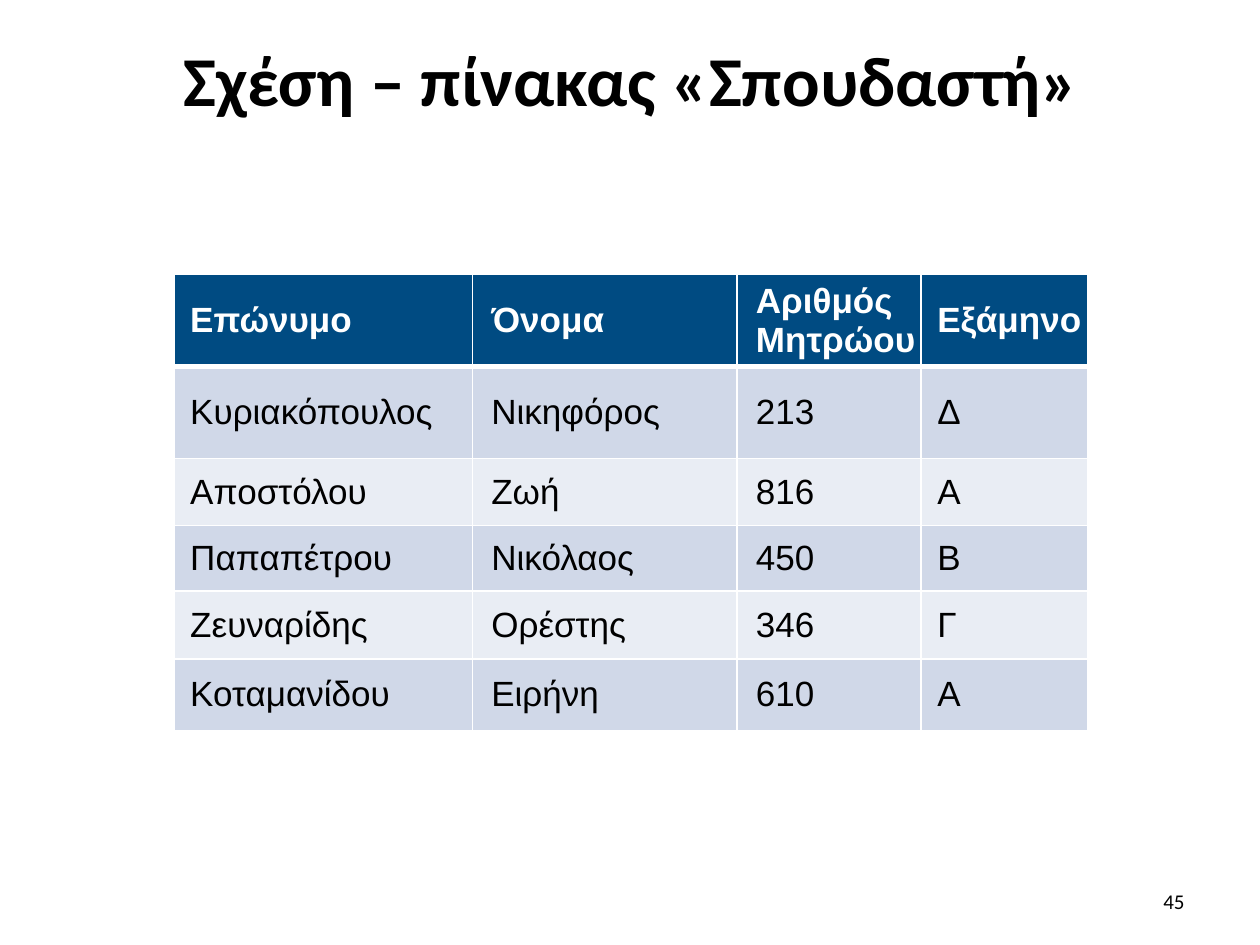
"""Build a slide with a table of students."""
import pptx
import pptx.util
import pptx.oxml
import pptx.oxml.ns
from pptx.dml.color import RGBColor
from pptx.enum.text import MSO_ANCHOR, PP_ALIGN
from pptx.util import Inches

BLACK = RGBColor(0, 0, 0)
WHITE = RGBColor(255, 255, 255)
NAVY = RGBColor(0x00, 0x4B, 0x82)
BANDS = [RGBColor(0xE9, 0xED, 0xF4), RGBColor(0xD0, 0xD8, 0xE8)]

TITLE = "Σχέση – πίνακας «Σπουδαστή»"
PAGE = "45"
ROWS = [
    ("Επώνυμο", "Όνομα", "Αριθμός Μητρώου", "Εξάμηνο"),
    ("Κυριακόπουλος", "Νικηφόρος", "213", "Δ"),
    ("Αποστόλου", "Ζωή", "816", "A"),
    ("Παπαπέτρου", "Νικόλαος", "450", "Β"),
    ("Ζευναρίδης", "Ορέστης", "346", "Γ"),
    ("Κοταμανίδου", "Ειρήνη", "610", "A"),
]
WIDTHS = [2.37, 2.1, 1.46, 1.32]
HEIGHTS = [0.73, 0.73, 0.53, 0.52, 0.54, 0.57]
INDENTS = [0.12, 0.14, 0.14, 0.12]


def style(para, face, size, color, bold=False):
    font = para.font
    font.name, font.size, font.bold = face, pptx.util.Pt(size), bold
    font.color.rgb = color


def add_text(slide, text, box, size, align, bold=False):
    frame = slide.shapes.add_textbox(*map(Inches, box)).text_frame
    frame.word_wrap = True
    frame.vertical_anchor = MSO_ANCHOR.MIDDLE
    para = frame.paragraphs[0]
    para.text, para.alignment = text, align
    style(para, "Calibri", size, BLACK, bold)


def add_edges(cell, points):
    props = cell._tc.get_or_add_tcPr()
    for side, width in points.items():
        props.append(pptx.oxml.parse_xml(
            f'<a:ln{side} {pptx.oxml.ns.nsdecls("a")} w="{pptx.util.Pt(width)}">'
            f'<a:solidFill><a:srgbClr val="{WHITE}"/></a:solidFill></a:ln{side}>'))


def fill_cell(cell, text, row, indent):
    head = row == 0
    add_edges(cell, {"L": 1, "R": 1, "T": 3 if row == 1 else 1, "B": 3 if head else 1})
    cell.fill.solid()
    cell.fill.fore_color.rgb = NAVY if head else BANDS[row % 2]
    cell.margin_left = cell.margin_right = Inches(0.01)
    cell.margin_top = cell.margin_bottom = 0
    cell.vertical_anchor = MSO_ANCHOR.MIDDLE
    para = cell.text_frame.paragraphs[0]
    para.text = text
    para._p.get_or_add_pPr().set("marL", str(Inches(indent)))
    style(para, "Arial", 20, WHITE if head else BLACK, head)


def add_grid(slide):
    box = (1.38, 2.18, sum(WIDTHS), sum(HEIGHTS))
    table = slide.shapes.add_table(len(ROWS), len(WIDTHS), *map(Inches, box)).table
    for col, width in zip(table.columns, WIDTHS):
        col.width = Inches(width)
    for line, height in zip(table.rows, HEIGHTS):
        line.height = Inches(height)
    for row, texts in enumerate(ROWS):
        for col, text in enumerate(texts):
            fill_cell(table.cell(row, col), text, row, INDENTS[col])


def main():
    deck = pptx.Presentation()
    deck.slide_width, deck.slide_height = Inches(10), Inches(7.5)
    slide = deck.slides.add_slide(deck.slide_layouts[6])
    add_text(slide, TITLE, (0.51, 0.13, 9, 0.99), 40, PP_ALIGN.CENTER, True)
    add_grid(slide)
    add_text(slide, PAGE, (7.17, 6.95, 2.33, 0.4), 12, PP_ALIGN.RIGHT)
    deck.save("out.pptx")


if __name__ == "__main__":
    main()
